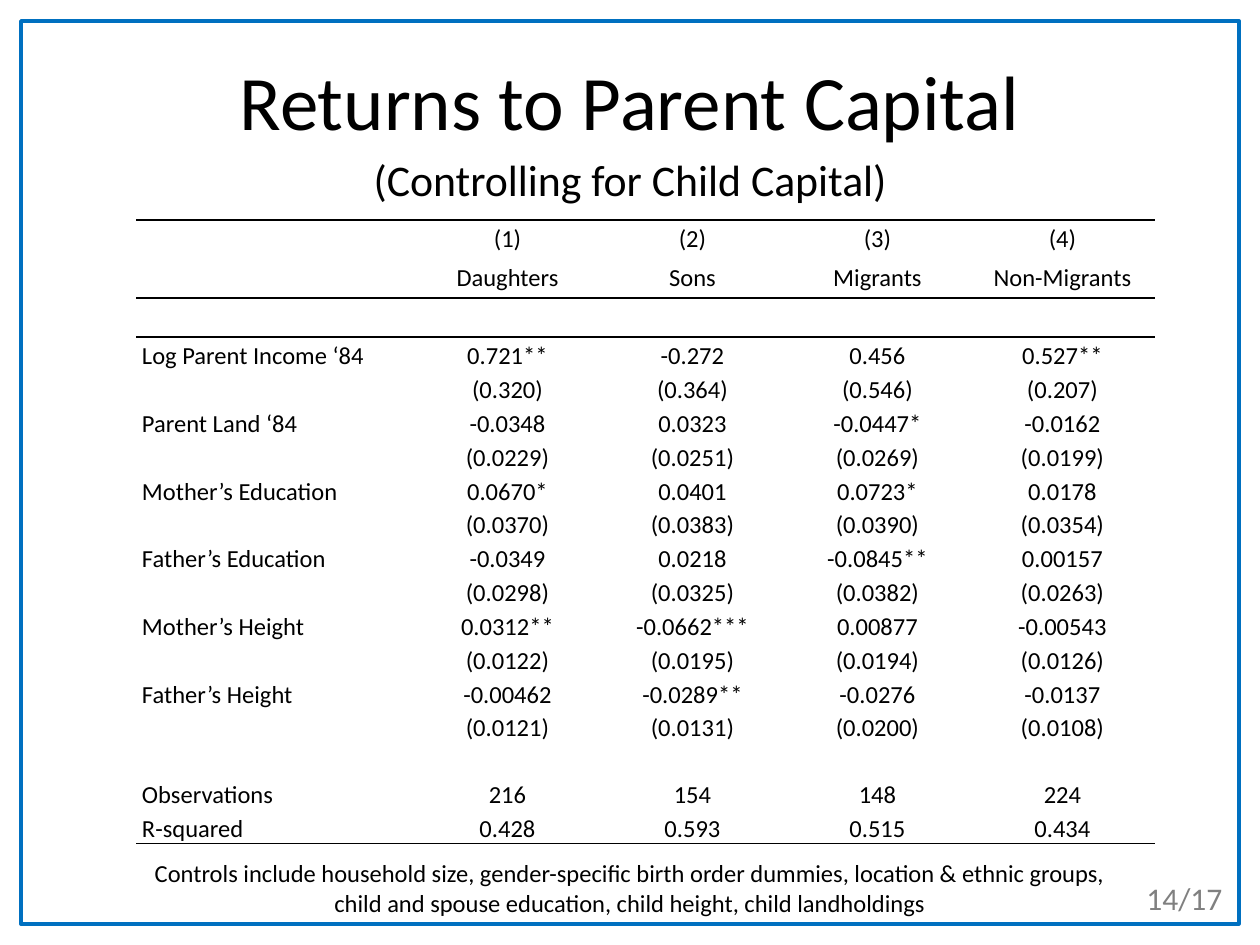
"""Build the slide on returns to parent capital."""
from typing import NamedTuple

from lxml.etree import SubElement
from pptx import Presentation
from pptx.dml.color import RGBColor
from pptx.enum.shapes import MSO_SHAPE
from pptx.enum.text import MSO_ANCHOR as Anchor, MSO_AUTO_SIZE as Auto, PP_ALIGN as Align
from pptx.oxml.ns import qn
from pptx.util import Emu, Pt

BLACK, BLUE, GREY = "000000", "0070C0", "808080"
FACE = "Calibri"
BODY = 14
PLAIN = "{2D5ABB26-0587-4C30-8999-92F81FD0307C}"


class Box(NamedTuple):
    x: int
    y: int
    w: int
    h: int


class Term(NamedTuple):
    name: str
    coefs: tuple
    errs: tuple


HEADS = [
    ("", "(1)", "(2)", "(3)", "(4)"),
    ("", "Daughters", "Sons", "Migrants", "Non-Migrants"),
]
TERMS = [
    Term("Log Parent Income ‘84", ("0.721**", "-0.272", "0.456", "0.527**"),
         ("0.320", "0.364", "0.546", "0.207")),
    Term("Parent Land ‘84", ("-0.0348", "0.0323", "-0.0447*", "-0.0162"),
         ("0.0229", "0.0251", "0.0269", "0.0199")),
    Term("Mother’s Education", ("0.0670*", "0.0401", "0.0723*", "0.0178"),
         ("0.0370", "0.0383", "0.0390", "0.0354")),
    Term("Father’s Education", ("-0.0349", "0.0218", "-0.0845**", "0.00157"),
         ("0.0298", "0.0325", "0.0382", "0.0263")),
    Term("Mother’s Height", ("0.0312**", "-0.0662***", "0.00877", "-0.00543"),
         ("0.0122", "0.0195", "0.0194", "0.0126")),
    Term("Father’s Height", ("-0.00462", "-0.0289**", "-0.0276", "-0.0137"),
         ("0.0121", "0.0131", "0.0200", "0.0108")),
]
STATS = [
    ("Observations", "216", "154", "148", "224"),
    ("R-squared", "0.428", "0.593", "0.515", "0.434"),
]
GAP = ("",) * 5


def px(n: int) -> Emu:
    """Turn pixels into EMU."""
    return Emu(round(n * 914400 / 126))


def paint(code: str) -> RGBColor:
    """Turn a hex string into a colour."""
    return RGBColor.from_string(code)


def write(frame, text: str, size: int = BODY, color: str = BLACK,
          align=Align.CENTER, space: float | None = None) -> None:
    """Fill a text frame, one paragraph for each line of text."""
    for i, line in enumerate(text.split("\n")):
        para = frame.paragraphs[0] if i == 0 else frame.add_paragraph()
        para.alignment = align
        para.line_spacing = space
        if not line:
            SubElement(para._p, qn("a:endParaRPr"), sz=str(size * 100))
            continue
        run = para.add_run()
        run.text = line
        run.font.name, run.font.size = FACE, Pt(size)
        run.font.color.rgb = paint(color)


def label(slide, box: Box, text: str, anchor=Anchor.TOP, fit=Auto.SHAPE_TO_FIT_TEXT,
          **form) -> None:
    """Add a wrapped text box."""
    frame = slide.shapes.add_textbox(*map(px, box)).text_frame
    frame.word_wrap = True
    frame.auto_size = fit
    frame.vertical_anchor = anchor
    write(frame, text, **form)


def border(slide, box: Box) -> None:
    """Draw the outline round the slide."""
    shape = slide.shapes.add_shape(MSO_SHAPE.RECTANGLE, *map(px, box))
    shape.shadow.inherit = False
    shape.fill.background()
    shape.line.color.rgb = paint(BLUE)
    shape.line.width = Pt(2)


def rule(cell, side: str) -> None:
    """Draw a thin black line on one side of a cell."""
    line = SubElement(cell._tc.get_or_add_tcPr(), qn(f"a:ln{side}"), w=str(Pt(1)))
    fill = SubElement(line, qn("a:solidFill"))
    SubElement(fill, qn("a:srgbClr"), val=BLACK)


def grid(slide, box: Box, rows: list, wides: list, highs: list) -> None:
    """Add the table of results."""
    table = slide.shapes.add_table(len(rows), len(wides), *map(px, box)).table
    table.first_row = table.horz_banding = False
    table._tbl.tblPr.find(qn("a:tableStyleId")).text = PLAIN
    for col, wide in zip(table.columns, wides):
        col.width = px(wide)
    edges = {0: "T", 1: "B", 2: "T", len(rows) - 1: "B"}
    for r, (row, high) in enumerate(zip(rows, highs)):
        table.rows[r].height = px(high)
        for c, text in enumerate(row):
            cell = table.cell(r, c)
            cell.margin_left = cell.margin_right = px(6)
            cell.margin_top = cell.margin_bottom = 0
            if r in edges:
                rule(cell, edges[r])
            cell.fill.background()
            write(cell.text_frame, text, space=1.15,
                  align=Align.CENTER if c else Align.LEFT)


def main() -> None:
    """Lay out the slide and save it."""
    deck = Presentation()
    deck.slide_width, deck.slide_height = px(1260), px(945)
    slide = deck.slides.add_slide(deck.slide_layouts[6])
    border(slide, Box(21, 21, 1218, 903))
    label(slide, Box(63, 21, 1134, 158), "Returns to Parent Capital",
          anchor=Anchor.MIDDLE, fit=Auto.NONE, size=44)
    label(slide, Box(105, 852, 1050, 72),
          "Controls include household size, gender-specific birth order dummies, "
          "location & ethnic groups,\n"
          "child and spouse education, child height, child landholdings")
    label(slide, Box(105, 147, 1050, 66), "(Controlling for Child Capital)", size=25)
    rows = [*HEADS, GAP]
    for term in TERMS:
        rows.append((term.name, *term.coefs))
        rows.append(("", *(f"({err})" for err in term.errs)))
    rows += [GAP, *STATS]
    wides = [279] + [185] * 4
    highs = [39] * 3 + [33] * (len(rows) - 3)
    grid(slide, Box(136, 220, sum(wides), sum(highs)), rows, wides, highs)
    label(slide, Box(1134, 873, 105, 51), "14/17", size=18, color=GREY, align=Align.LEFT)
    deck.save("out.pptx")


if __name__ == "__main__":
    main()
